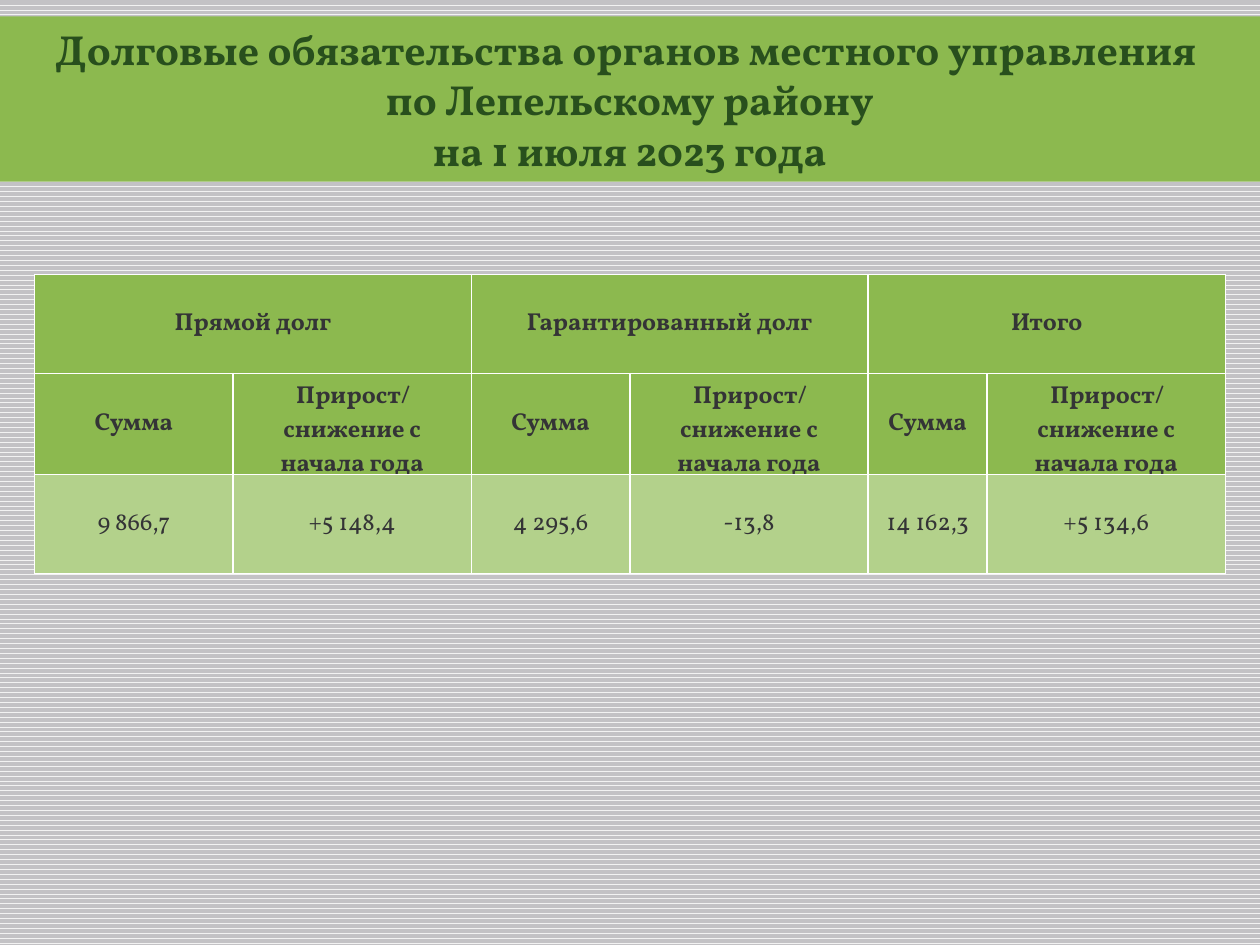
import pptx
import pptx.dml.color
import pptx.enum.dml
import pptx.enum.text
import pptx.oxml
import pptx.oxml.ns
import pptx.util
from pptx.util import Cm

HEADING = [
    "Долговые обязательства органов местного управления ",
    "по Лепельскому району",
    "на 1 июля 2023 года",
]
DEBT_KINDS = ["Прямой долг", "Гарантированный долг", "Итого"]
MEASURES = ["Сумма", "Прирост/снижение с начала года"]
AMOUNTS = ["9 866,7", "+5 148,4", "4 295,6", "-13,8", "14 162,3", "+5 134,6"]
COLUMN_WIDTHS = [4, 4.8, 3.2, 4.8, 2.4, 4.8]
ROW_HEIGHT = 2

GREEN, PALE_GREEN, DARK_GREEN = "8CB94F", "B3D18B", "284F1D"
INK, WHITE = "343436", "FFFFFF"
STRIPE, GREY = "F2F2F2", "C3C2C5"


def paint(color, value):
    color.rgb = pptx.dml.color.RGBColor.from_string(value)


def fill_solid(fill, value):
    fill.solid()
    paint(fill.fore_color, value)


def write(frame, lines, size=14, color=INK, bold=True):
    for number, line in enumerate(lines):
        paragraph = frame.add_paragraph() if number else frame.paragraphs[0]
        paragraph.alignment = pptx.enum.text.PP_ALIGN.CENTER
        run = paragraph.add_run()
        run.text = line
        run.font.name = "Vollkorn"
        run.font.size = pptx.util.Pt(size)
        run.font.bold = bold
        paint(run.font.color, color)


def outline(cell, color=WHITE, width=1):
    properties = cell._tc.get_or_add_tcPr()
    for place, side in enumerate("LRTB"):
        border = pptx.oxml.parse_xml(
            f'<a:ln{side} {pptx.oxml.ns.nsdecls("a")} w="{pptx.util.Pt(width)}">'
            f'<a:solidFill><a:srgbClr val="{color}"/></a:solidFill></a:ln{side}>'
        )
        properties.insert(place, border)


def add_heading(slide):
    heading = slide.shapes.title
    heading.left, heading.top = Cm(-0.02), Cm(0.33)
    heading.width, heading.height = Cm(25.43), Cm(3.33)
    fill_solid(heading.fill, GREEN)
    frame = heading.text_frame
    frame.word_wrap = True
    frame.auto_size = pptx.enum.text.MSO_AUTO_SIZE.SHAPE_TO_FIT_TEXT
    frame.vertical_anchor = pptx.enum.text.MSO_ANCHOR.MIDDLE
    write(frame, HEADING, size=24, color=DARK_GREEN)


def add_debts(slide):
    kinds = [text for kind in DEBT_KINDS for text in (kind, "")]
    rows = [kinds, MEASURES * len(DEBT_KINDS), AMOUNTS]
    debts = slide.shapes.add_table(
        len(rows), len(COLUMN_WIDTHS), Cm(0.7), Cm(5.53),
        Cm(sum(COLUMN_WIDTHS)), Cm(ROW_HEIGHT * len(rows)),
    ).table
    for column, width in zip(debts.columns, COLUMN_WIDTHS):
        column.width = Cm(width)
    for row_number, texts in enumerate(rows):
        debts.rows[row_number].height = Cm(ROW_HEIGHT)
        is_header = texts is not AMOUNTS
        for column_number, text in enumerate(texts):
            cell = debts.cell(row_number, column_number)
            cell.vertical_anchor = pptx.enum.text.MSO_ANCHOR.MIDDLE
            fill_solid(cell.fill, GREEN if is_header else PALE_GREEN)
            outline(cell)
            if text:
                write(cell.text_frame, [text], bold=is_header)
    for first in range(0, len(COLUMN_WIDTHS), len(MEASURES)):
        debts.cell(0, first).merge(debts.cell(0, first + len(MEASURES) - 1))


def main():
    deck = pptx.Presentation()
    deck.slide_width, deck.slide_height = Cm(25.4), Cm(19.05)
    slide = deck.slides.add_slide(deck.slide_layouts.get_by_name("Title Only"))
    backdrop = slide.background.fill
    backdrop.patterned()
    backdrop.pattern = pptx.enum.dml.MSO_PATTERN.WAVE
    paint(backdrop.fore_color, STRIPE)
    paint(backdrop.back_color, GREY)
    add_heading(slide)
    add_debts(slide)
    deck.save("out.pptx")


if __name__ == "__main__":
    main()
